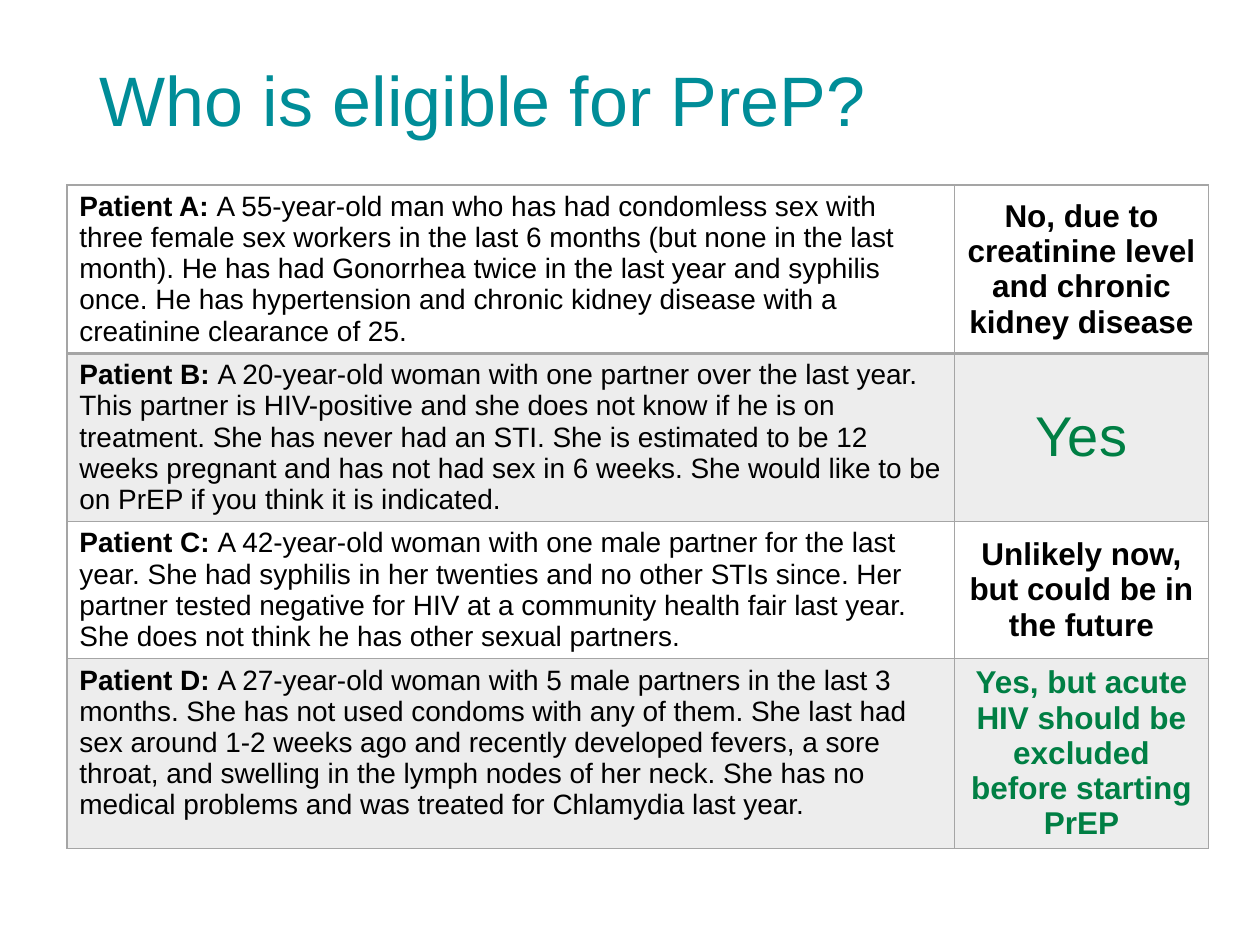
from dataclasses import dataclass

from lxml import etree
from pptx import Presentation
from pptx.dml.color import RGBColor
from pptx.enum import text
from pptx.oxml import ns
from pptx.util import Pt

COLORS = {"title": "008D98", "ink": "000000", "yes": "007F44",
          "border": "A5A5A5", "band": "EDEDED"}
FONT = "Arial"


@dataclass
class Patient:
    name: str
    story: str
    answer: str
    height: float
    color: str = "ink"
    size: float = 18
    bold: bool = True


PATIENTS = [
    Patient("A", "A 55-year-old man who has had condomless sex with three female sex workers "
            "in the last 6 months (but none in the last month). He has had Gonorrhea twice in "
            "the last year and syphilis once. He has hypertension and chronic kidney disease "
            "with a creatinine clearance of 25.",
            "No, due to creatinine level and chronic kidney disease", 96),
    Patient("B", "A 20-year-old woman with one partner over the last year. This partner is "
            "HIV-positive and she does not know if he is on treatment. She has never had an "
            "STI. She is estimated to be 12 weeks pregnant and has not had sex in 6 weeks. "
            "She would like to be on PrEP if you think it is indicated.",
            "Yes", 96, "yes", 32, False),
    Patient("C", "A 42-year-old woman with one male partner for the last year. She had "
            "syphilis in her twenties and no other STIs since. Her partner tested negative "
            "for HIV at a community health fair last year. She does not think he has other "
            "sexual partners.",
            "Unlikely now, but could be in the future", 78.4),
    Patient("D", "A 27-year-old woman with 5 male partners in the last 3 months. She has not "
            "used condoms with any of them. She last had sex around 1-2 weeks ago and recently "
            "developed fevers, a sore throat, and swelling in the lymph nodes of her neck. She "
            "has no medical problems and was treated for Chlamydia last year.",
            "Yes, but acute HIV should be excluded before starting PrEP", 108.4, "yes"),
]


def add_span(para, words: str, size: float, color: str, bold: bool = False) -> None:
    span = para.add_run()
    span.text = words
    for name, value in {"name": FONT, "size": Pt(size), "bold": bold}.items():
        setattr(span.font, name, value)
    span.font.color.rgb = RGBColor.from_string(COLORS[color])


def set_borders(cell, widths: dict[str, float]) -> None:
    """Draw the cell's edges; line elements must come before the fill."""
    properties = cell._tc.get_or_add_tcPr()
    for index, (side, width) in enumerate(widths.items()):
        line = etree.Element(ns.qn(f"a:ln{side}"), w=str(Pt(width)))
        fill = etree.SubElement(line, ns.qn("a:solidFill"))
        etree.SubElement(fill, ns.qn("a:srgbClr"), val=COLORS["border"])
        properties.insert(index, line)


def fill_row(table, index: int, patient: Patient) -> None:
    table.rows[index].height = Pt(patient.height)
    story, answer = table.cell(index, 0), table.cell(index, 1)

    para = story.text_frame.paragraphs[0]
    add_span(para, f"Patient {patient.name}: ", 16, "ink", True)
    add_span(para, patient.story, 16, "ink")

    answer.vertical_anchor = text.MSO_ANCHOR.MIDDLE
    para = answer.text_frame.paragraphs[0]
    para.alignment = text.PP_ALIGN.CENTER
    add_span(para, patient.answer, patient.size, patient.color, patient.bold)

    # The line under the first row is heavier
    widths = {"L": 1, "R": 1, "T": 2 if index == 1 else 1, "B": 2 if index == 0 else 1}
    for cell in (story, answer):
        if index % 2:
            cell.fill.solid()
            cell.fill.fore_color.rgb = RGBColor.from_string(COLORS["band"])
        else:
            cell.fill.background()
        set_borders(cell, widths)


def main() -> None:
    deck = Presentation()
    deck.slide_width, deck.slide_height = Pt(720), Pt(540)
    page = deck.slides.add_slide(deck.slide_layouts[5])

    # Title
    title = page.shapes.title
    box = {"left": 49.7, "top": 28.8, "width": 620.6, "height": 60.5}
    for name, value in box.items():
        setattr(title, name, Pt(value))
    title.text_frame.vertical_anchor = text.MSO_ANCHOR.MIDDLE
    para = title.text_frame.paragraphs[0]
    para.alignment = text.PP_ALIGN.LEFT
    para.line_spacing = 0.9
    add_span(para, "Who is eligible for PreP?", 40, "title")

    # Patients and answers
    widths = (507.2, 145.2)
    height = sum(patient.height for patient in PATIENTS)
    table = page.shapes.add_table(len(PATIENTS), len(widths), Pt(38.2), Pt(105.8),
                                  Pt(sum(widths)), Pt(height)).table
    table.first_row = table.horz_banding = False
    for column, width in zip(table.columns, widths):
        column.width = Pt(width)
    for index, patient in enumerate(PATIENTS):
        fill_row(table, index, patient)

    deck.save("out.pptx")


if __name__ == "__main__":
    main()
